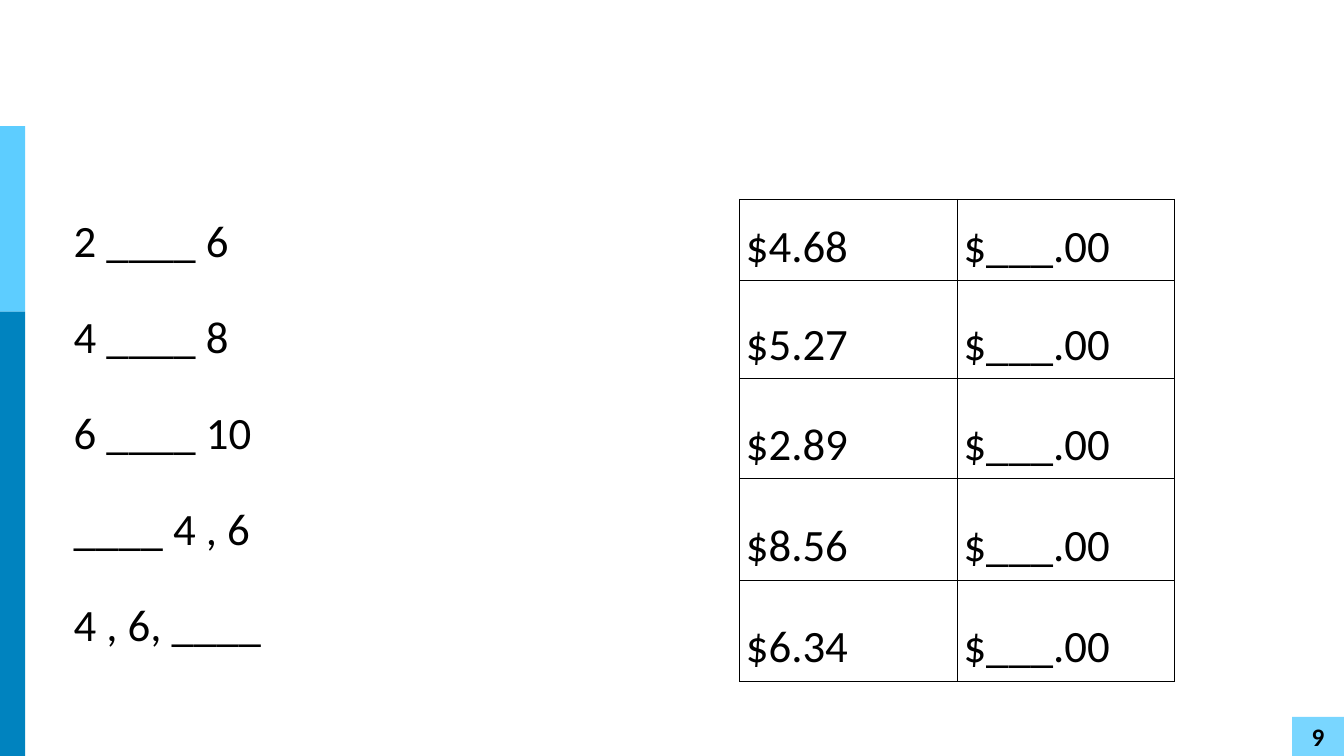
import pptx
import pptx.dml.color
import pptx.enum.shapes
import pptx.enum.text
import pptx.oxml
import pptx.oxml.ns
import pptx.util

Pt = pptx.util.Pt
RGB = pptx.dml.color.RGBColor
Align = pptx.enum.text.PP_ALIGN
Anchor = pptx.enum.text.MSO_ANCHOR

BLACK = RGB(0x00, 0x00, 0x00)
SKY = RGB(0x5D, 0xCD, 0xFF)
BLUE = RGB(0x00, 0x83, 0xBF)
PALE = RGB(0x79, 0xD6, 0xFF)

SERIES = ["2 ____ 6", "4 ____ 8", "6 ____ 10", "____ 4 , 6", "4 , 6, ____"]
PRICES = ["$4.68", "$5.27", "$2.89", "$8.56", "$6.34"]
BLANK = "$___.00"
ROWS = [58.3, 69.8, 71.3, 72.7, 72]


class Page:
    font = "Calibri"
    size = 32
    edge = 0.8

    def __init__(self, deck):
        self.slide = deck.slides.add_slide(deck.slide_layouts[1])
        title = self.slide.shapes.title
        title.element.getparent().remove(title.element)

    def text(self, para, words, size=size, bold=False):
        run = para.add_run()
        run.text = words
        run.font.name = self.font
        run.font.size = Pt(size)
        run.font.bold = bold
        run.font.color.rgb = BLACK

    def inset(self, item, gap):
        item.margin_left = item.margin_right = Pt(gap)
        item.margin_top = item.margin_bottom = Pt(gap)

    def block(self, left, top, width, height, fill):
        shape = self.slide.shapes.add_shape(
            pptx.enum.shapes.MSO_SHAPE.RECTANGLE,
            Pt(left), Pt(top), Pt(width), Pt(height))
        shape.shadow.inherit = False
        shape.fill.solid()
        shape.fill.fore_color.rgb = fill
        shape.line.fill.background()
        return shape

    def badge(self, words, *place):
        frame = self.block(*place, PALE).text_frame
        self.inset(frame, 0)
        frame.vertical_anchor = Anchor.MIDDLE
        para = frame.paragraphs[0]
        para.alignment = Align.CENTER
        self.text(para, words, 18, True)

    def body(self, lines, left, top, width, height):
        hold = self.slide.placeholders[1]
        hold.left, hold.top = Pt(left), Pt(top)
        hold.width, hold.height = Pt(width), Pt(height)
        frame = hold.text_frame
        frame.word_wrap = True
        frame.auto_size = pptx.enum.text.MSO_AUTO_SIZE.NONE
        frame.vertical_anchor = Anchor.TOP
        self.inset(frame, 3.6)
        for i, line in enumerate(lines):
            para = frame.add_paragraph() if i else frame.paragraphs[0]
            para.line_spacing = 0.9
            para.space_before = Pt(0)
            para.space_after = Pt(34)
            props = para._p.get_or_add_pPr()
            props.set("marL", "0")
            props.set("indent", "0")
            props.append(pptx.oxml.parse_xml(
                f'<a:buNone {pptx.oxml.ns.nsdecls("a")}/>'))
            self.text(para, line)

    def border(self, cell):
        props = cell._tc.get_or_add_tcPr()
        for i, side in enumerate("LRTB"):
            props.insert(i, pptx.oxml.parse_xml(
                f'<a:ln{side} {pptx.oxml.ns.nsdecls("a")} w="{Pt(self.edge)}">'
                f'<a:solidFill><a:srgbClr val="{BLACK}"/></a:solidFill>'
                f'</a:ln{side}>'))

    def table(self, data, left, top, width, rows):
        grid = self.slide.shapes.add_table(
            len(data), len(data[0]), Pt(left), Pt(top),
            Pt(width), Pt(sum(rows))).table
        grid.first_row = grid.horz_banding = False
        for row, high, texts in zip(grid.rows, rows, data):
            row.height = Pt(high)
            for cell, words in zip(row.cells, texts):
                cell.fill.background()
                cell.vertical_anchor = Anchor.BOTTOM
                self.inset(cell, 4.5)
                self.border(cell)
                self.text(cell.text_frame.paragraphs[0], words)


def main():
    deck = pptx.Presentation()
    deck.slide_width, deck.slide_height = Pt(960), Pt(540)
    page = Page(deck)
    page.block(0, 90, 18, 132.7, SKY)
    page.block(0, 222.7, 18, 317.3, BLUE)
    page.badge("9", 923, 512, 37, 28)
    page.body(SERIES, 49, 153, 431, 337)
    page.table([(price, BLANK) for price in PRICES], 528.3, 142.4, 311, ROWS)
    deck.save("out.pptx")


if __name__ == "__main__":
    main()
